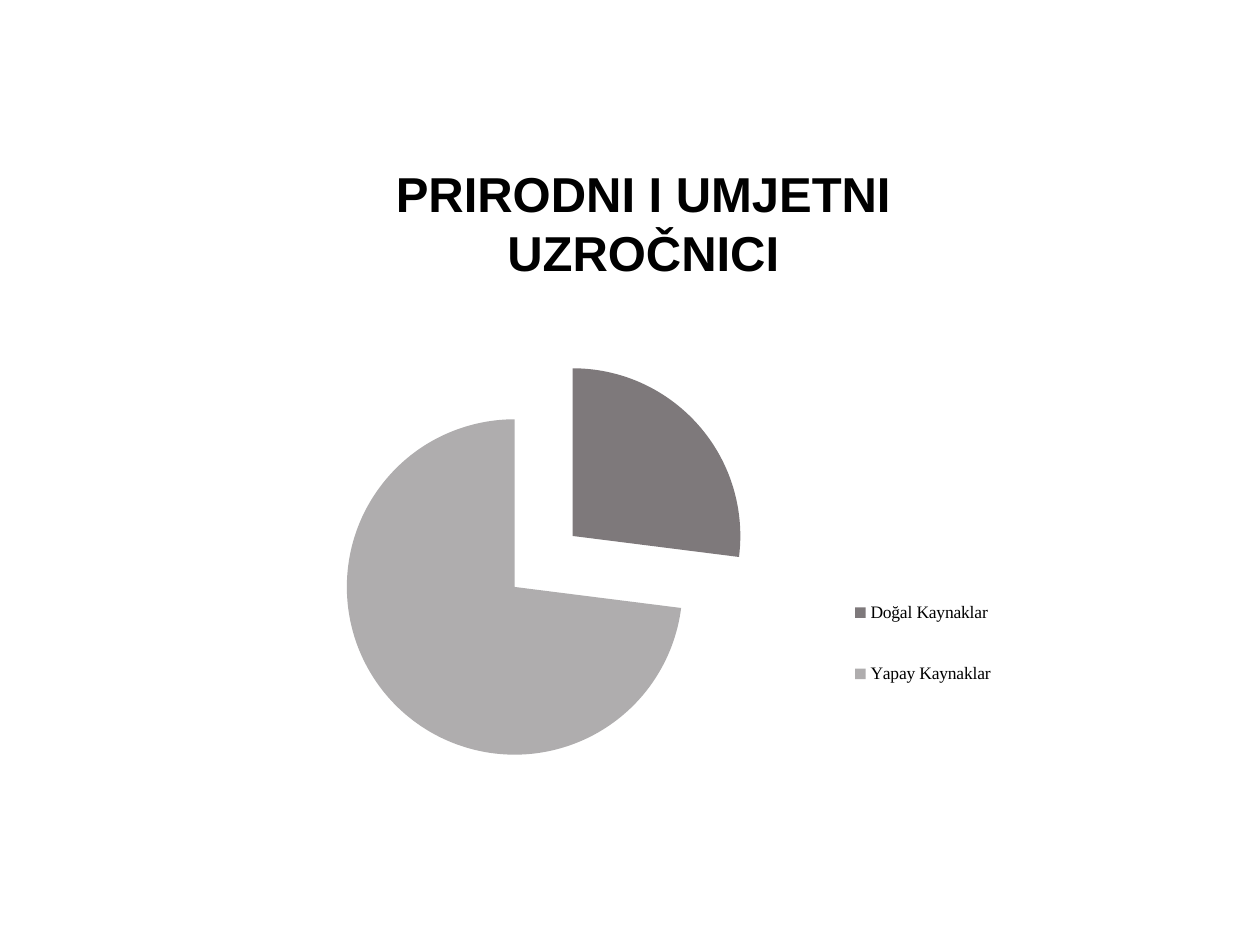
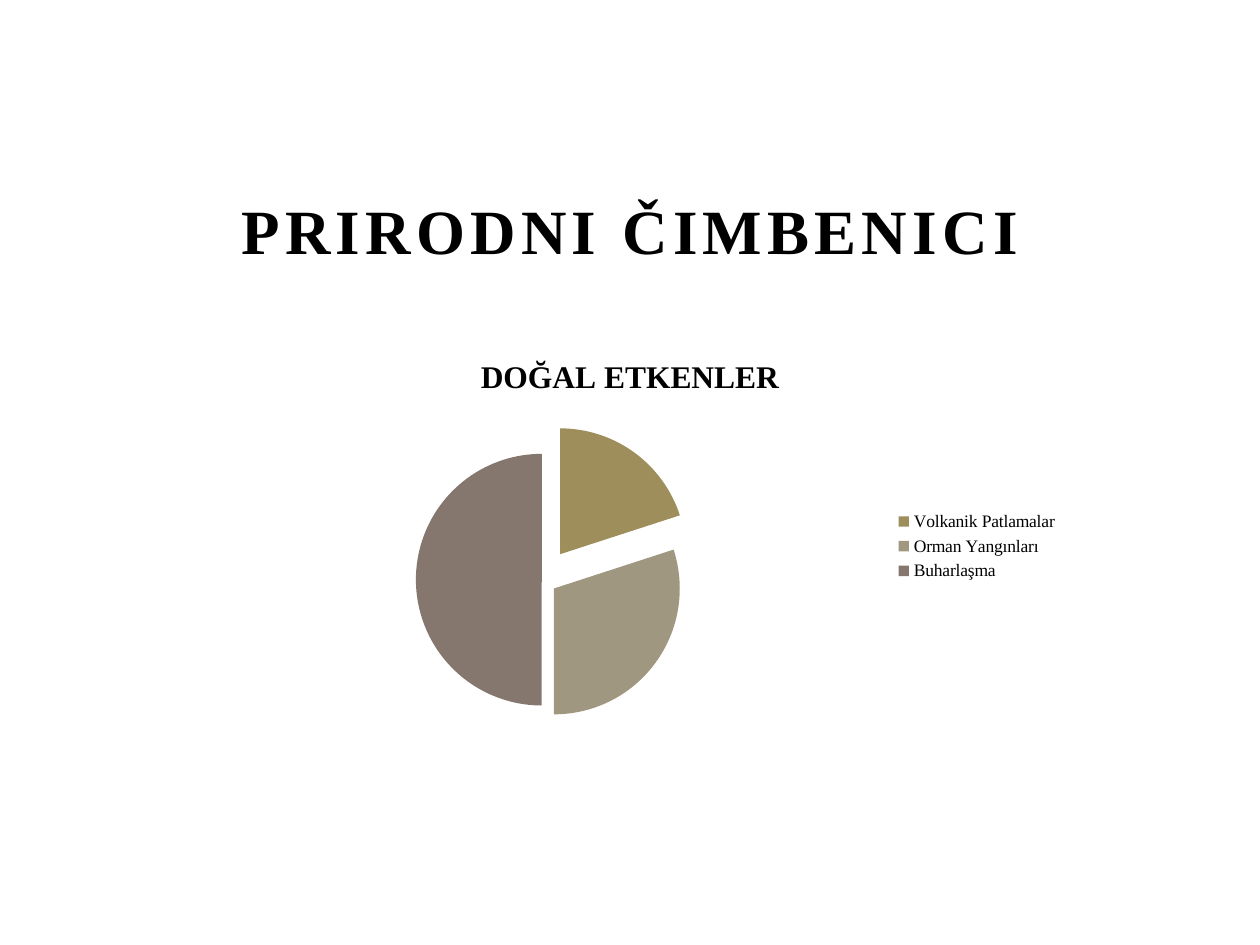
from lxml.etree import SubElement
from pptx import Presentation
from pptx.chart.data import CategoryChartData
from pptx.dml.color import RGBColor
from pptx.enum.chart import XL_CHART_TYPE, XL_LEGEND_POSITION
from pptx.enum.text import MSO_ANCHOR, MSO_AUTO_SIZE, PP_ALIGN
from pptx.oxml.ns import qn
from pptx.util import Inches, Pt

BLACK = RGBColor(0x00, 0x00, 0x00)
DARK = RGBColor(0x7E, 0x79, 0x7B)
LIGHT = RGBColor(0xAF, 0xAD, 0xAE)
GOLD = RGBColor(0x9E, 0x8E, 0x5C)
SAND = RGBColor(0xA0, 0x97, 0x81)
BROWN = RGBColor(0x85, 0x77, 0x6D)
SERIF = "Times New Roman"


def style(font, name, size, bold=False):
    """Set face, size and weight in black."""
    font.name, font.size, font.bold = name, Pt(size), bold
    font.color.rgb = BLACK


def add_title(slide, box, text, face, size, anchor, gap=0):
    """Place the title in its box, with letter spacing in points."""
    title = slide.shapes.title
    title.left, title.top, title.width, title.height = map(Inches, box)
    frame = title.text_frame
    frame.auto_size = MSO_AUTO_SIZE.NONE
    frame.word_wrap = True
    frame.vertical_anchor = anchor
    line = frame.paragraphs[0]
    line.alignment = PP_ALIGN.CENTER
    run = line.add_run()
    run.text = text
    style(run.font, face, size, True)
    if gap:
        run.font._element.set("spc", str(gap * 100))


def set_layout(part, box, inner=False):
    """Fix a chart part at fractions of the chart area."""
    layout = part.find(qn("c:layout"))
    if layout is None:
        layout = part.makeelement(qn("c:layout"))
        if inner:
            part.insert(0, layout)
        else:
            part.find(qn("c:legendPos")).addnext(layout)
    manual = SubElement(layout, qn("c:manualLayout"))
    rules = [("layoutTarget", "inner")] if inner else []
    rules += [("xMode", "edge"), ("yMode", "edge")]
    rules += zip("xywh", map(str, box))
    for tag, value in rules:
        SubElement(manual, qn("c:" + tag)).set("val", value)


def add_pie(slide, box, name, slices, plot, key=None, head=False):
    """Draw a pie from (label, value, colour, offset) slices."""
    data = CategoryChartData()
    data.categories = [part[0] for part in slices]
    data.add_series(name, [part[1] for part in slices])
    chart = slide.shapes.add_chart(
        XL_CHART_TYPE.PIE, *map(Inches, box), data).chart
    style(chart.font, SERIF, 10)
    chart.has_title = head
    if head:
        run = chart.chart_title.text_frame.paragraphs[0].add_run()
        run.text = name
        style(run.font, SERIF, 18, True)
        chart.chart_title.include_in_layout = False
    chart.has_legend = True
    chart.legend.position = XL_LEGEND_POSITION.RIGHT
    chart.legend.include_in_layout = False
    if key:
        set_layout(chart.legend._element, key)
    pie = chart.plots[0]
    pie.vary_by_categories = True
    set_layout(pie._element.getparent(), plot, True)
    for index, (_, _, colour, offset) in enumerate(slices):
        form = pie.series[0].points[index].format
        form.fill.solid()
        form.fill.fore_color.rgb = colour
        form.line.fill.background()
        burst = pie.series[0]._element.findall(qn("c:dPt"))[index]
        shift = burst.makeelement(qn("c:explosion"))
        shift.set("val", str(offset))
        burst.find(qn("c:spPr")).addprevious(shift)


def add_causes(slide):
    """Fill the slide on natural and artificial causes."""
    add_title(slide, (2.19, 1.25, 5.83, 1.04), "PRIRODNI I UMJETNI UZROČNICI",
              "Arial", 28, MSO_ANCHOR.TOP)
    add_pie(slide, (1.48, 2.66, 7, 3.33), "Series 1",
            [("Doğal Kaynaklar", 27, DARK, 23),
             ("Yapay Kaynaklar", 73, LIGHT, 23)],
            (0.04, 0.14, 0.73, 0.8), (0.72, 0.54, 0.23, 0.39))


def add_factors(slide):
    """Fill the slide on natural factors."""
    add_title(slide, (1.5, 1.42, 7, 0.75), "PRIRODNI ČIMBENICI",
              SERIF, 36, MSO_ANCHOR.BOTTOM, 3)
    add_pie(slide, (1.5, 2.67, 7, 3.33), "DOĞAL ETKENLER",
            [("Volkanik Patlamalar", 20, GOLD, 25),
             ("Orman Yangınları", 30, SAND, 12),
             ("Buharlaşma", 50, BROWN, 0)],
            (0.22, 0.28, 0.36, 0.6), head=True)


def main():
    """Build and save the slides."""
    deck = Presentation()
    deck.slide_width, deck.slide_height = Inches(10), Inches(7.5)
    for fill in (add_causes, add_factors):
        fill(deck.slides.add_slide(deck.slide_layouts[5]))
    deck.save("out.pptx")


if __name__ == "__main__":
    main()
